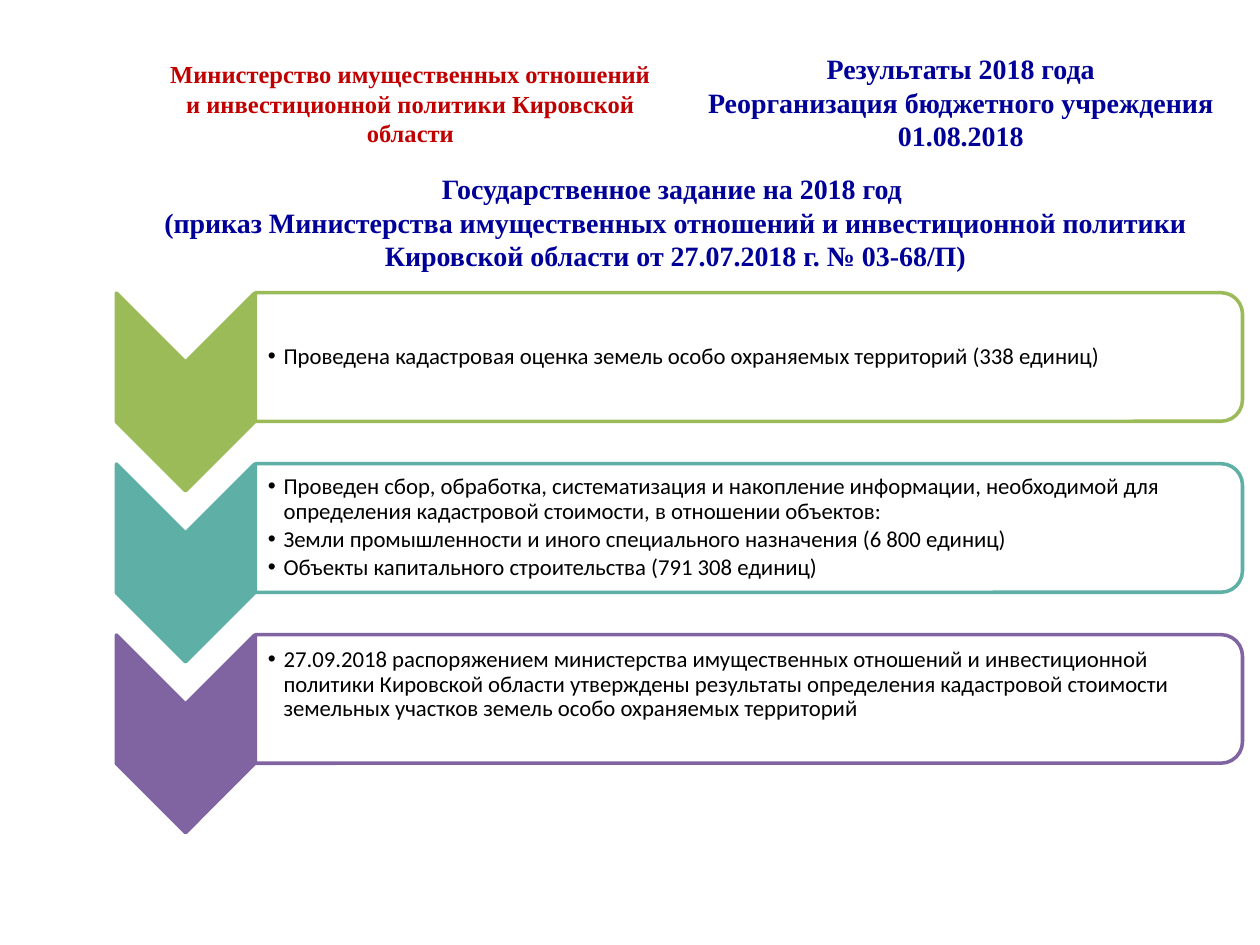
"""Builds the slide on the 2018 state assignment results."""
import pptx
import pptx.chart.data
import pptx.dml.color
import pptx.enum.shapes
import pptx.enum.text
import pptx.oxml
import pptx.oxml.ns
import pptx.util
from lxml import etree

Pt = pptx.util.Pt
FORM = pptx.enum.shapes.MSO_SHAPE
ALIGN = pptx.enum.text.PP_ALIGN
ANCHOR = pptx.enum.text.MSO_ANCHOR
SIZE = pptx.enum.text.MSO_AUTO_SIZE
HUES = {"red": "C00000", "navy": "000099", "black": "000000", "white": "FFFFFF",
        "green": "9BBB59", "teal": "5EAFA6", "violet": "8064A2"}
HEAD = {"name": "Times New Roman", "bold": True}
BODY = {"name": "Calibri", "bold": False, "size": Pt(13)}
MID = {"alignment": ALIGN.CENTER, "space_before": Pt(0)}
ITEM = {"alignment": ALIGN.LEFT, "level": 1, "line_spacing": 0.9,
        "space_before": Pt(0), "space_after": Pt(2)}
FIRST, STEP = 204, 97.7
STEPS = [
    ("green", 1, ["Проведена кадастровая оценка земель особо охраняемых территорий (338 единиц)"]),
    ("teal", 1, ["Проведен сбор, обработка, систематизация и накопление информации, необходимой для "
                 "определения кадастровой стоимости, в отношении объектов:",
                 "Земли промышленности и иного специального назначения (6 800 единиц)",
                 "Объекты капитального строительства (791 308 единиц)"]),
    ("violet", 17, ["27.09.2018 распоряжением министерства имущественных отношений и инвестиционной "
                    "политики Кировской области утверждены результаты определения кадастровой стоимости "
                    "земельных участков земель особо охраняемых территорий"]),
]


def tint(name):
    return pptx.dml.color.RGBColor.from_string(HUES[name])


def apply(thing, style):
    for key, value in style.items():
        setattr(thing, key, value)


def place(shape, left, top, width, height):
    apply(shape, {"left": Pt(left), "top": Pt(top), "width": Pt(width), "height": Pt(height)})


def write(shape, lines, hue, font, para, frame):
    box = shape.text_frame
    apply(box, {"word_wrap": True, "auto_size": SIZE.NONE, **frame})
    for num, line in enumerate(lines):
        part = box.add_paragraph() if num else box.paragraphs[0]
        part.text = line
        apply(part, para)
        for run in part.runs:
            apply(run.font, font)
            run.font.color.rgb = tint(hue)


def label(slide, area, lines, hue, size, frame):
    box = slide.shapes.add_textbox(0, 0, 0, 0)
    place(box, *area)
    write(box, lines, hue, {**HEAD, "size": Pt(size)}, MID, frame)


def turned(slide, form, mid, size, fill, line):
    (x, y), (wide, high) = mid, size
    shape = slide.shapes.add_shape(form, 0, 0, 0, 0)
    place(shape, x - wide / 2, y - high / 2, wide, high)
    apply(shape, {"rotation": 90})
    shape.shadow.inherit = False
    shape.fill.solid()
    shape.fill.fore_color.rgb = tint(fill)
    shape.line.color.rgb = tint(line)
    shape.line.width = Pt(2)
    return shape


def fade(shape, share):
    color = shape._element.spPr.find(".//" + pptx.oxml.ns.qn("a:srgbClr"))
    etree.SubElement(color, pptx.oxml.ns.qn("a:alpha"), val=str(share * 1000))


def bullet(shape):
    for part in shape.text_frame.paragraphs:
        props = part._p.get_or_add_pPr()
        props.set("marL", str(Pt(9)))
        props.set("indent", str(-Pt(9)))
        etree.SubElement(props, pptx.oxml.ns.qn("a:buChar"), char="•")


def step(slide, body, y, hue, foot, lines):
    turned(slide, FORM.CHEVRON, (106, y + 20), (113, 79), hue, hue)
    panel = turned(slide, FORM.ROUND_2_SAME_RECTANGLE, (428, y), (73.5, 564), "white", hue)
    fade(panel, 90)
    place(body, 146, y - 33, 560, 66)
    frame = {"vertical_anchor": ANCHOR.MIDDLE, "margin_left": Pt(7), "margin_top": Pt(1),
             "margin_right": Pt(1), "margin_bottom": Pt(foot)}
    write(body, lines, "black", BODY, ITEM, frame)
    bullet(body)
    body._element.getparent().append(body._element)


def main():
    deck = pptx.Presentation()
    apply(deck, {"slide_width": Pt(720), "slide_height": Pt(540)})
    slide = deck.slides.add_slide(deck.slide_layouts[4])
    title, *bodies, spare = list(slide.placeholders)
    spare._element.getparent().remove(spare._element)
    label(slide, (90, 26.5, 289, 65),
          ["Министерство имущественных отношений и инвестиционной политики Кировской области"],
          "red", 14, {"vertical_anchor": ANCHOR.MIDDLE})
    label(slide, (388, 26, 322, 65.5),
          ["Результаты 2018 года", "Реорганизация бюджетного учреждения", "01.08.2018"],
          "navy", 16, {"auto_size": SIZE.SHAPE_TO_FIT_TEXT})
    place(title, 62, 94.5, 648, 62.5)
    write(title, ["Государственное задание на 2018 год \v(приказ Министерства имущественных отношений "
                  "и инвестиционной политики Кировской области от 27.07.2018 г. № 03-68/П)"],
          "navy", {**HEAD, "size": Pt(16)}, MID, {"vertical_anchor": ANCHOR.TOP})
    for num, (body, (hue, foot, lines)) in enumerate(zip(bodies, STEPS)):
        step(slide, body, FIRST + num * STEP, hue, foot, lines)
    deck.save("out.pptx")


if __name__ == "__main__":
    main()
